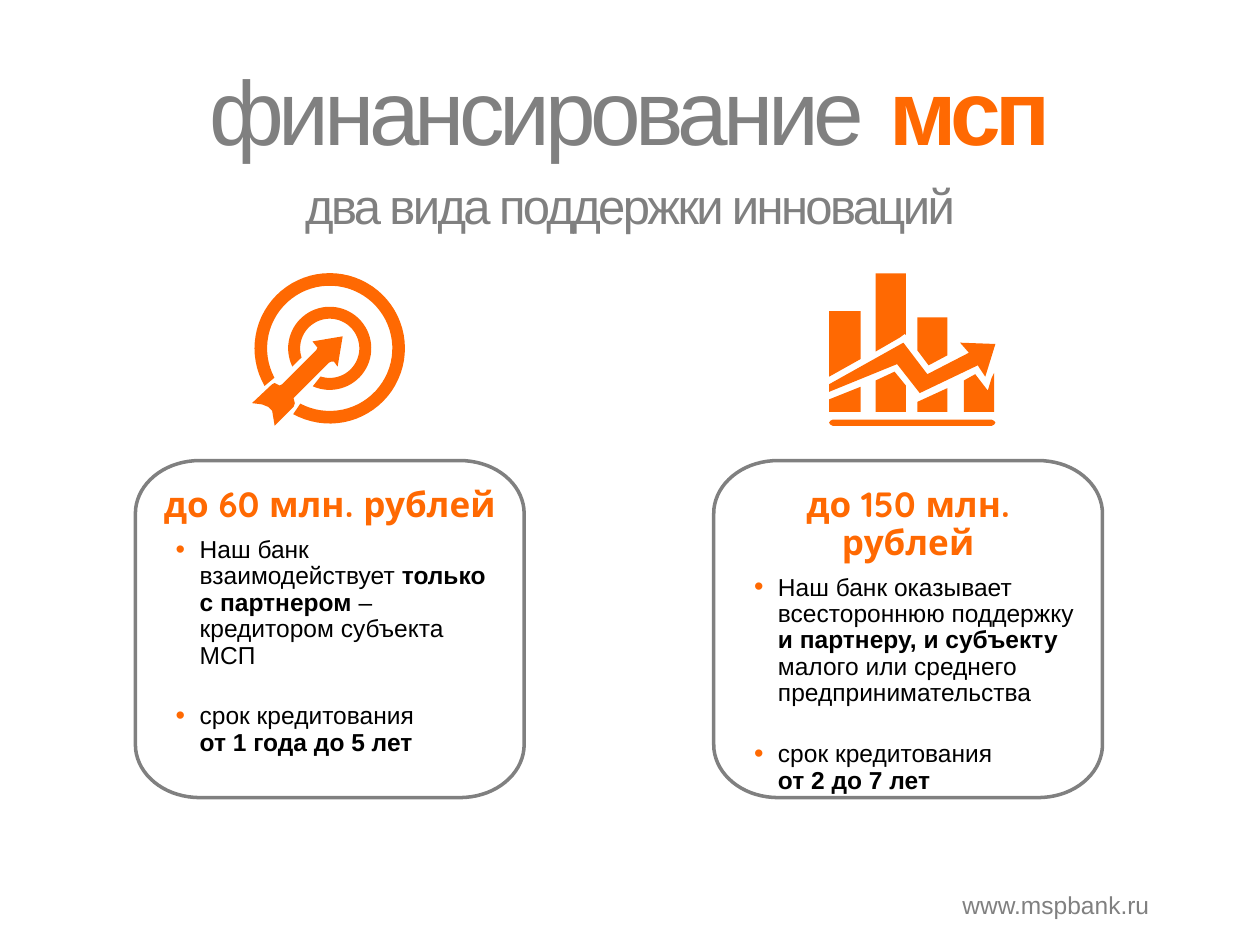
import math
import pptx
import pptx.dml.color
import pptx.enum.text
import pptx.oxml
import pptx.oxml.ns
import pptx.util

ORANGE = pptx.dml.color.RGBColor(0xFF, 0x69, 0x02)
GRAY = pptx.dml.color.RGBColor(0x80, 0x80, 0x80)
BLACK = pptx.dml.color.RGBColor(0, 0, 0)
CENTER = pptx.enum.text.PP_ALIGN.CENTER
COLUMNS, ROWS = 100, 75
CELL = pptx.util.Inches(0.1)
CARD_TOP, CARD_WIDTH, CARD_HEIGHT = 36.55, 30.85, 26.75

CARDS = [
    (10.75, "до 60 млн. рублей",
     [("Наш банк взаимодействует ", False), ("только с партнером", True),
      (" – кредитором субъекта МСП", False)], "от 1 года до 5 лет"),
    (56.65, "до 150 млн. рублей",
     [("Наш банк оказывает всестороннюю поддержку ", False),
      ("и партнеру, и субъекту ", True),
      ("малого или среднего предпринимательства", False)], "от 2 до 7 лет"),
]

ARROW = [
    (23.3, 31.6), (26.1, 28.8), (26.3, 28.7), (26.5, 28.7), (26.8, 29.1),
    (27.2, 26.7), (24.8, 27.1), (25.2, 27.6), (25.1, 27.8), (22.4, 30.5),
    (22.2, 30.6), (21.8, 30.4), (21.6, 30.5), (20, 32), (20.8, 32.1),
    (21.3, 32.3), (21.6, 32.6), (21.8, 33.8), (23.3, 32.3), (23.4, 32),
]

GROWTH_CHART = [
    [(66.1, 33.8), (65.9, 33.7), (65.8, 33.55), (65.9, 33.4), (66.1, 33.3),
     (78.7, 33.3), (78.9, 33.4), (79, 33.55), (78.9, 33.7), (78.7, 33.8)],
    [(78.2, 29.9), (79, 27.3), (76.2, 27.2), (76.9, 28), (73.6, 29.7),
     (71.7, 27.2), (65.8, 30.5), (65.8, 31.1), (71.2, 28.9), (73, 31.2),
     (77.6, 29)],
    [(68.3, 28.5), (68.3, 24.7), (65.8, 24.7), (65.8, 29.9)],
    [(71.4, 26.8), (71.8, 26.5), (71.9, 26.6), (71.9, 21.7), (69.5, 21.7),
     (69.5, 27.9)],
    [(73.7, 29), (75.2, 28.2), (75.2, 25.2), (72.8, 25.2), (72.8, 27.8)],
    [(72.8, 31.9), (72.8, 32.7), (75.2, 32.7), (75.2, 30.8)],
    [(78.7, 30), (78.4, 31), (77.4, 29.7), (76.5, 30.2), (76.5, 32.7),
     (78.9, 32.7), (78.9, 29.6)],
    [(71, 29.5), (69.5, 30.2), (69.5, 32.7), (71.9, 32.7), (71.9, 30.6)],
    [(65.8, 31.7), (65.8, 32.7), (68.3, 32.7), (68.3, 30.7)],
]


def cells(n):
    """Convert grid cells to a length."""
    return pptx.util.Emu(round(n * CELL))


def place(sp, *box):
    """Move a shape to a box given in grid cells."""
    sp.left, sp.top, sp.width, sp.height = map(cells, box)


def add_run(p, text, size=14, color=BLACK, bold=False, font="Arial", spacing=None):
    """Append formatted text to a paragraph."""
    r = p.add_run()
    r.text = text
    r.font.name, r.font.size, r.font.bold = font, pptx.util.Pt(size), bold
    r.font.color.rgb = color
    if spacing is not None:
        r._r.get_or_add_rPr().set("spc", str(round(spacing * 100)))


def set_bullet(p):
    """Give a paragraph an orange hanging bullet."""
    pPr = p._p.get_or_add_pPr()
    pPr.set("marL", str(cells(3)))
    pPr.set("indent", str(cells(-1.9)))
    ns = pptx.oxml.ns.nsdecls("a")
    for xml in (f'<a:buClr {ns}><a:srgbClr val="{ORANGE}"/></a:buClr>',
                f'<a:buSzPct {ns} val="110000"/>',
                f'<a:buFont {ns} typeface="Arial"/>',
                f'<a:buChar {ns} char="•"/>'):
        pPr.append(pptx.oxml.parse_xml(xml))


def arc(cx, cy, rx, ry, start, end):
    """Return points along an elliptical arc, with angles in degrees."""
    steps = max(8, round(abs(end - start) / 5))
    angles = [math.radians(start + (end - start) * i / steps) for i in range(steps + 1)]
    return [(cx + rx * math.cos(a), cy + ry * math.sin(a)) for a in angles]


def ring(outer, inner, outer_span, inner_span):
    """Return an open ring around the target centre."""
    cx, cy = 26.17, 27.65
    return (arc(cx, cy, outer, outer, *outer_span)
            + arc(cx, cy, inner, inner, *reversed(inner_span)))


def rounded_outline(x, y, w, h, rx=5.1, ry=4.2):
    """Return a rectangle outline with elliptical corners."""
    corners = [(x + w - rx, y + h - ry), (x + rx, y + h - ry),
               (x + rx, y + ry), (x + w - rx, y + ry)]
    return [pt for i, (cx, cy) in enumerate(corners)
            for pt in arc(cx, cy, rx, ry, 90 * i, 90 * i + 90)]


def add_outline(s, contours, fill=None, line=None):
    """Draw closed contours as one freeform."""
    paths = [[(cells(x), cells(y)) for x, y in contour] for contour in contours]
    fb = s.shapes.build_freeform(*paths[0][0], scale=1.0)
    for i, path in enumerate(paths):
        if i:
            fb.move_to(*path[0])
        fb.add_line_segments(path[1:], close=True)
    sp = fb.convert_to_shape()
    sp.shadow.inherit = False
    if fill is None:
        sp.fill.background()
    else:
        sp.fill.solid()
        sp.fill.fore_color.rgb = fill
    if line is None:
        sp.line.fill.background()
    else:
        sp.line.color.rgb = line
        sp.line.width = pptx.util.Pt(2)
    return sp


def add_bullet(tf, after):
    """Append an empty bulleted paragraph."""
    p = tf.add_paragraph()
    set_bullet(p)
    p.level, p.alignment = 1, pptx.enum.text.PP_ALIGN.LEFT
    p.line_spacing, p.space_after = 0.9, pptx.util.Pt(after)
    return p


def add_card(s, x, heading, details, term):
    """Add a rounded card with a heading and two bullets."""
    sp = add_outline(s, [rounded_outline(x, CARD_TOP, CARD_WIDTH, CARD_HEIGHT)], line=GRAY)
    tf = sp.text_frame
    tf.word_wrap = True
    tf.vertical_anchor = pptx.enum.text.MSO_ANCHOR.TOP
    tf.margin_left = tf.margin_right = tf.margin_top = tf.margin_bottom = cells(2.1)
    p = tf.paragraphs[0]
    p.alignment, p.line_spacing, p.space_after = CENTER, 0.9, pptx.util.Pt(7)
    add_run(p, heading, size=20, color=ORANGE, bold=True, font="Quicksand")
    p = add_bullet(tf, after=19.5)
    for text, bold in details:
        add_run(p, text, bold=bold)
    p = add_bullet(tf, after=2)
    add_run(p, "срок кредитования")
    p.add_line_break()
    add_run(p, term, bold=True)


def add_headings(s):
    """Fill the title and body placeholders."""
    title, body = s.shapes.title, s.placeholders[1]
    place(title, 5, 6, 90, 6.9)
    place(body, 5.2, 13.4, 89.6, 7.5)
    for sp in (title, body):
        sp.text_frame.auto_size = pptx.enum.text.MSO_AUTO_SIZE.NONE
        sp.text_frame.paragraphs[0].alignment = CENTER
    p = title.text_frame.paragraphs[0]
    p.line_spacing = 0.8
    add_run(p, "финансирование", size=52, color=GRAY, spacing=-3)
    add_run(p, " ", size=52, color=GRAY)
    add_run(p, "мсп", size=52, color=ORANGE, bold=True, spacing=-3)
    p = body.text_frame.paragraphs[0]
    pPr = p._p.get_or_add_pPr()
    pPr.set("marL", "0")
    pPr.set("indent", "0")
    pPr.append(pptx.oxml.parse_xml(f'<a:buNone {pptx.oxml.ns.nsdecls("a")}/>'))
    add_run(p, "два вида поддержки инноваций", size=28, color=GRAY, spacing=-1.5)


def add_address(s):
    """Add the web address at the bottom right."""
    tf = s.shapes.add_textbox(*map(cells, (74.2, 68.3, 19.2, 4.4))).text_frame
    tf.word_wrap = True
    tf.margin_left = tf.margin_right = tf.margin_top = tf.margin_bottom = 0
    p = tf.paragraphs[0]
    p.alignment, p.line_spacing = CENTER, 2.0
    add_run(p, "www.mspbank.ru", color=GRAY)


def main():
    """Build and save the slide."""
    prs = pptx.Presentation()
    prs.slide_width, prs.slide_height = cells(COLUMNS), cells(ROWS)
    s = prs.slides.add_slide(prs.slide_layouts[1])
    add_address(s)
    add_headings(s)
    for card in CARDS:
        add_card(s, *card)
    target = [ring(5.97, 4.97, (150, 479), (152, 478)),
              ring(3.3, 2.35, (154, 474), (162, 468)), ARROW]
    for icon in (target, GROWTH_CHART):
        add_outline(s, icon, fill=ORANGE)
    prs.save("out.pptx")


if __name__ == "__main__":
    main()
